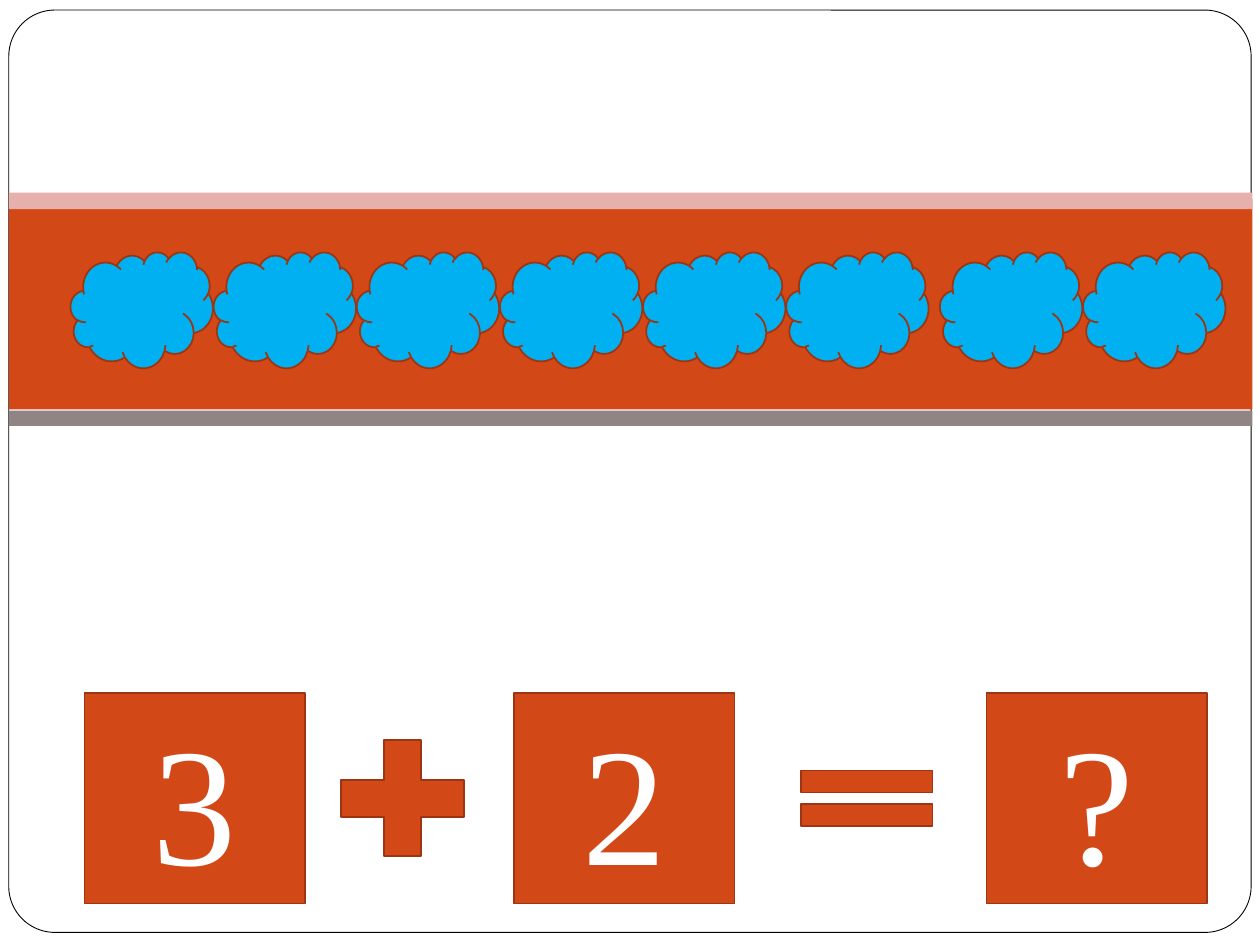
from pptx import Presentation
from pptx.dml.color import RGBColor
from pptx.enum.shapes import MSO_SHAPE
from pptx.enum.text import MSO_ANCHOR, PP_ALIGN
from pptx.util import Inches, Pt

ROUND, RECT = MSO_SHAPE.ROUNDED_RECTANGLE, MSO_SHAPE.RECTANGLE
BOX, CLOUD = MSO_SHAPE.FLOWCHART_PROCESS, MSO_SHAPE.CLOUD
PLUS, EQUAL = MSO_SHAPE.MATH_PLUS, MSO_SHAPE.MATH_EQUAL
MIDDLE, CENTER = MSO_ANCHOR.MIDDLE, PP_ALIGN.CENTER
ORANGE, RUST, BLUE, WHITE = "D34817", "9C3511", "00B0F0", "FFFFFF"

prs = Presentation()
prs.slide_width, prs.slide_height = Inches(10), Inches(7.5)
slide = prs.slides.add_slide(prs.slide_layouts[6])


def color(code):
    return RGBColor.from_string(code)


def draw(kind, left, top, width, height, fill, line=None, weight=1):
    """Add a flat shape, measured in inches; no line colour means no outline."""
    shape = slide.shapes.add_shape(
        kind, Inches(left), Inches(top), Inches(width), Inches(height))
    shape.shadow.inherit = False
    shape.fill.solid()
    shape.fill.fore_color.rgb = color(fill)
    if line:
        shape.line.color.rgb = color(line)
        shape.line.width = Pt(weight)
    else:
        shape.line.fill.background()
    return shape


# Frame and band
frame = draw(ROUND, 0.07, 0.08, 9.86, 7.32, WHITE, "000000", 0.5)
frame.adjustments[0] = 0.05
for top, height, fill in [(1.58, 1.67, ORANGE), (1.53, 0.13, "E6B1AC"),
                          (3.26, 0.12, "918485")]:
    draw(RECT, 0.07, top, 9.87, height, fill)

# Sum
for left, text in [(0.67, "3"), (4.08, "2"), (7.83, "?")]:
    box = draw(BOX, left, 5.5, 1.75, 1.67, ORANGE, RUST)
    frame = box.text_frame
    frame.vertical_anchor = MIDDLE
    para = frame.paragraphs[0]
    para.text = text
    para.alignment = CENTER
    para.font.size = Pt(96)
    para.font.name = "Times New Roman"
    para.font.color.rgb = color(WHITE)
draw(PLUS, 2.53, 5.71, 1.33, 1.25, ORANGE, RUST)
draw(EQUAL, 6.17, 5.96, 1.42, 0.75, ORANGE, RUST)

# Clouds: a run of six, then a run of two
pitch = 1.136
for start, count in [(0.56, 6), (7.46, 2)]:
    for i in range(count):
        draw(CLOUD, start + i * pitch, 2, 1.13, 0.92, BLUE, RUST)

prs.save("out.pptx")
